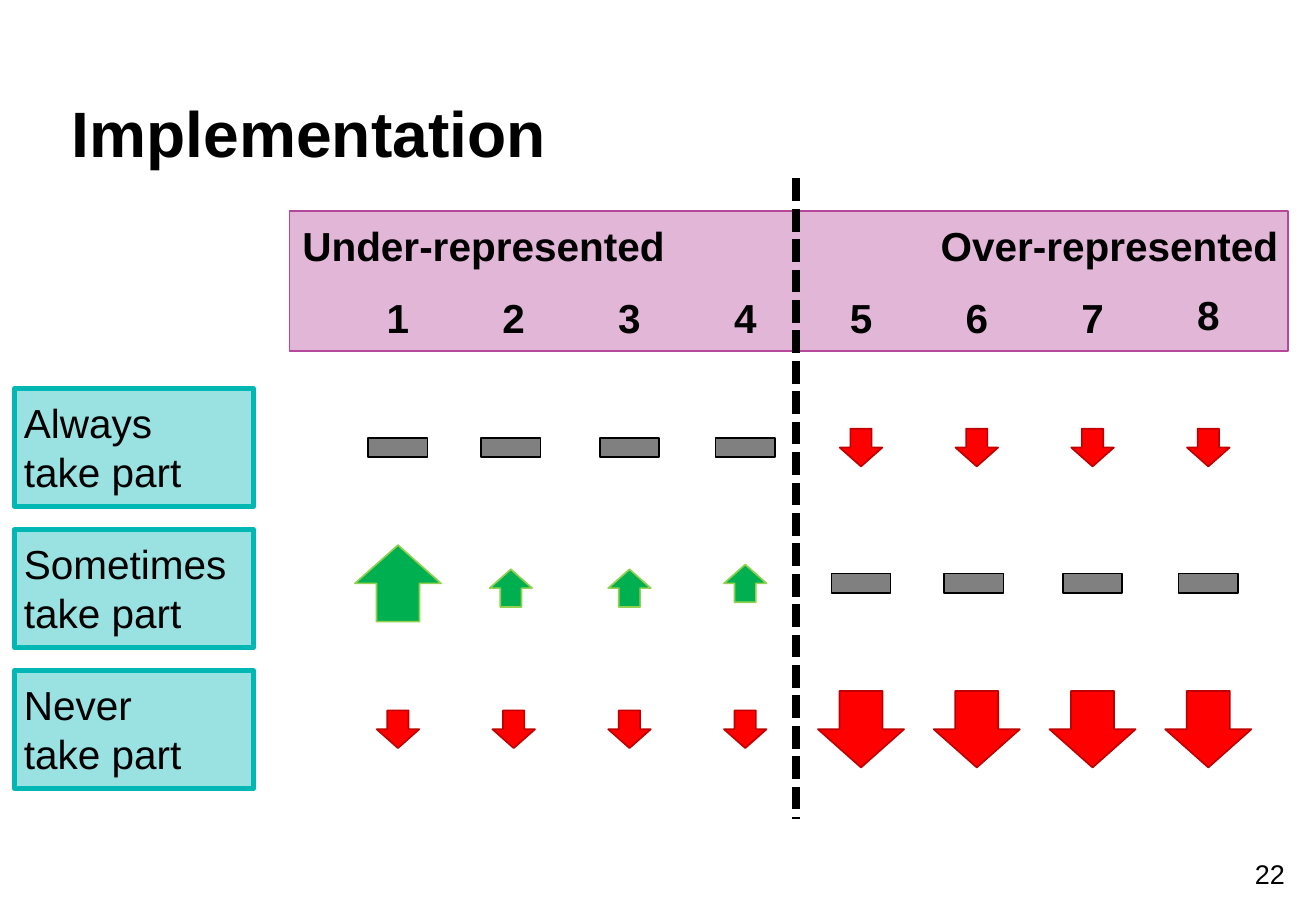
from dataclasses import dataclass

from lxml.etree import SubElement
from pptx import Presentation
from pptx.dml.color import RGBColor
from pptx.enum.dml import MSO_LINE
from pptx.enum.shapes import MSO_CONNECTOR, MSO_SHAPE as Preset
from pptx.enum.text import MSO_ANCHOR as Anchor, PP_ALIGN as Align
from pptx.oxml.ns import qn
from pptx.shapes.autoshape import Shape
from pptx.slide import Slide
from pptx.util import Cm, Pt

COLORS = {
    "black": "000000",
    "grey": "808080",
    "red": "FF0000",
    "dark red": "C00000",
    "green": "00B050",
    "light green": "92D050",
    "teal": "00B7B4",
    "light teal": "99E2E1",
    "purple": "B4489B",
    "light purple": "E1B6D7",
}
FONT = "Arial"
FIRST_COLUMN_CENTER = 8.32
COLUMN_STEP = 2.42
FIRST_LABEL_TOP = 8.13
LABEL_STEP = 2.95
HEADER_TOP = 4.42


@dataclass(frozen=True)
class Box:
    """Position and size in centimetres."""
    left: float
    top: float
    width: float
    height: float


@dataclass(frozen=True)
class MarkStyle:
    preset: Preset
    width: float
    height: float
    fill: str
    line: str


@dataclass(frozen=True)
class Mark:
    """A mark in a column, with its offset from the centre of the cell."""
    style: MarkStyle
    shift_x: float = 0
    shift_y: float = 0


@dataclass(frozen=True)
class Row:
    label: str
    center: float
    marks: list[Mark]


SMALL, LARGE = (0.89, 0.79), (1.8, 1.6)
BAR = MarkStyle(Preset.RECTANGLE, 1.24, 0.41, "grey", "black")
SMALL_DOWN = MarkStyle(Preset.DOWN_ARROW, *SMALL, "red", "dark red")
LARGE_DOWN = MarkStyle(Preset.DOWN_ARROW, *LARGE, "red", "dark red")
SMALL_UP = MarkStyle(Preset.UP_ARROW, *SMALL, "green", "light green")
LARGE_UP = MarkStyle(Preset.UP_ARROW, *LARGE, "green", "light green")

BARS = [Mark(BAR), Mark(BAR, shift_x=-0.06), Mark(BAR), Mark(BAR)]
RISES = [
    Mark(LARGE_UP),
    Mark(SMALL_UP, shift_x=-0.06, shift_y=0.1),
    Mark(SMALL_UP, shift_y=0.1),
    Mark(SMALL_UP),
]
ROWS = [
    Row("Always\ntake part", 9.36, BARS + [Mark(SMALL_DOWN)] * 4),
    Row("Sometimes take part", 12.2, RISES + BARS),
    Row("Never\ntake part", 15.25, [Mark(SMALL_DOWN)] * 4 + [Mark(LARGE_DOWN)] * 4),
]


def rgb(name: str) -> RGBColor:
    return RGBColor.from_string(COLORS[name])


def column_center(column: int) -> float:
    return FIRST_COLUMN_CENTER + column * COLUMN_STEP


def set_text(shape: Shape, text: str, size: float = 24, bold: bool = False,
             align: Align = Align.LEFT, anchor: Anchor = Anchor.TOP,
             inset: float = 0.2) -> None:
    frame = shape.text_frame
    frame.text = text
    frame.word_wrap = True
    frame.vertical_anchor = anchor
    frame.margin_left = frame.margin_right = Cm(inset)
    frame.margin_top = frame.margin_bottom = Cm(inset)
    for paragraph in frame.paragraphs:
        paragraph.alignment = align
        for run in paragraph.runs:
            run.font.name = FONT
            run.font.size = Pt(size)
            run.font.bold = bold
            run.font.color.rgb = rgb("black")


def add_text(slide: Slide, box: Box, text: str, **text_format) -> None:
    shape = slide.shapes.add_textbox(
        Cm(box.left), Cm(box.top), Cm(box.width), Cm(box.height))
    set_text(shape, text, **text_format)


def add_filled(slide: Slide, preset: Preset, box: Box, fill: str, line: str,
               line_width: float = 1) -> Shape:
    shape = slide.shapes.add_shape(
        preset, Cm(box.left), Cm(box.top), Cm(box.width), Cm(box.height))
    shape.shadow.inherit = False
    shape.fill.solid()
    shape.fill.fore_color.rgb = rgb(fill)
    shape.line.color.rgb = rgb(line)
    shape.line.width = Pt(line_width)
    return shape


def add_title(slide: Slide) -> None:
    title = slide.shapes.title
    title.left, title.top = Cm(1.5), Cm(1.27)
    title.width, title.height = Cm(22.89), Cm(2.29)
    set_text(title, "Implementation", size=38, bold=True,
             anchor=Anchor.BOTTOM, inset=0)


def add_header(slide: Slide) -> None:
    add_filled(slide, Preset.RECTANGLE, Box(6.05, HEADER_TOP, 20.88, 2.92),
               "light purple", "purple")
    add_text(slide, Box(6.12, HEADER_TOP, 8.84, 1.42), "Under-represented", bold=True)
    add_text(slide, Box(17.37, HEADER_TOP, 9.55, 1.42), "Over-represented",
             bold=True, align=Align.RIGHT)
    for column in range(8):
        top = 5.87 if column == 7 else 5.92
        add_text(slide, Box(column_center(column) - 0.62, top, 1.24, 1.42),
                 str(column + 1), bold=True, align=Align.CENTER)


def add_divider(slide: Slide) -> None:
    divider = slide.shapes.add_connector(
        MSO_CONNECTOR.STRAIGHT, Cm(16.64), Cm(3.73), Cm(16.64), Cm(17.12))
    divider.line.color.rgb = rgb("black")
    divider.line.width = Pt(4.5)
    divider.line.dash_style = MSO_LINE.SQUARE_DOT
    SubElement(divider._element.spPr, qn("a:effectLst"))


def add_row(slide: Slide, index: int, row: Row) -> None:
    label = add_filled(
        slide, Preset.RECTANGLE,
        Box(0.3, FIRST_LABEL_TOP + index * LABEL_STEP, 5, 2.46),
        "light teal", "teal", line_width=3)
    set_text(label, row.label)
    for column, mark in enumerate(row.marks):
        style = mark.style
        box = Box(column_center(column) + mark.shift_x - style.width / 2,
                  row.center + mark.shift_y - style.height / 2,
                  style.width, style.height)
        add_filled(slide, style.preset, box, style.fill, style.line)


def main() -> None:
    presentation = Presentation()
    presentation.slide_width, presentation.slide_height = Cm(27.51), Cm(19.05)
    slide = presentation.slides.add_slide(presentation.slide_layouts[5])
    add_title(slide)
    add_header(slide)
    add_divider(slide)
    for index, row in enumerate(ROWS):
        add_row(slide, index, row)
    add_text(slide, Box(25.91, 17.93, 1.27, 0.69), "22", size=16,
             align=Align.CENTER, inset=0)
    presentation.save("out.pptx")


if __name__ == "__main__":
    main()
